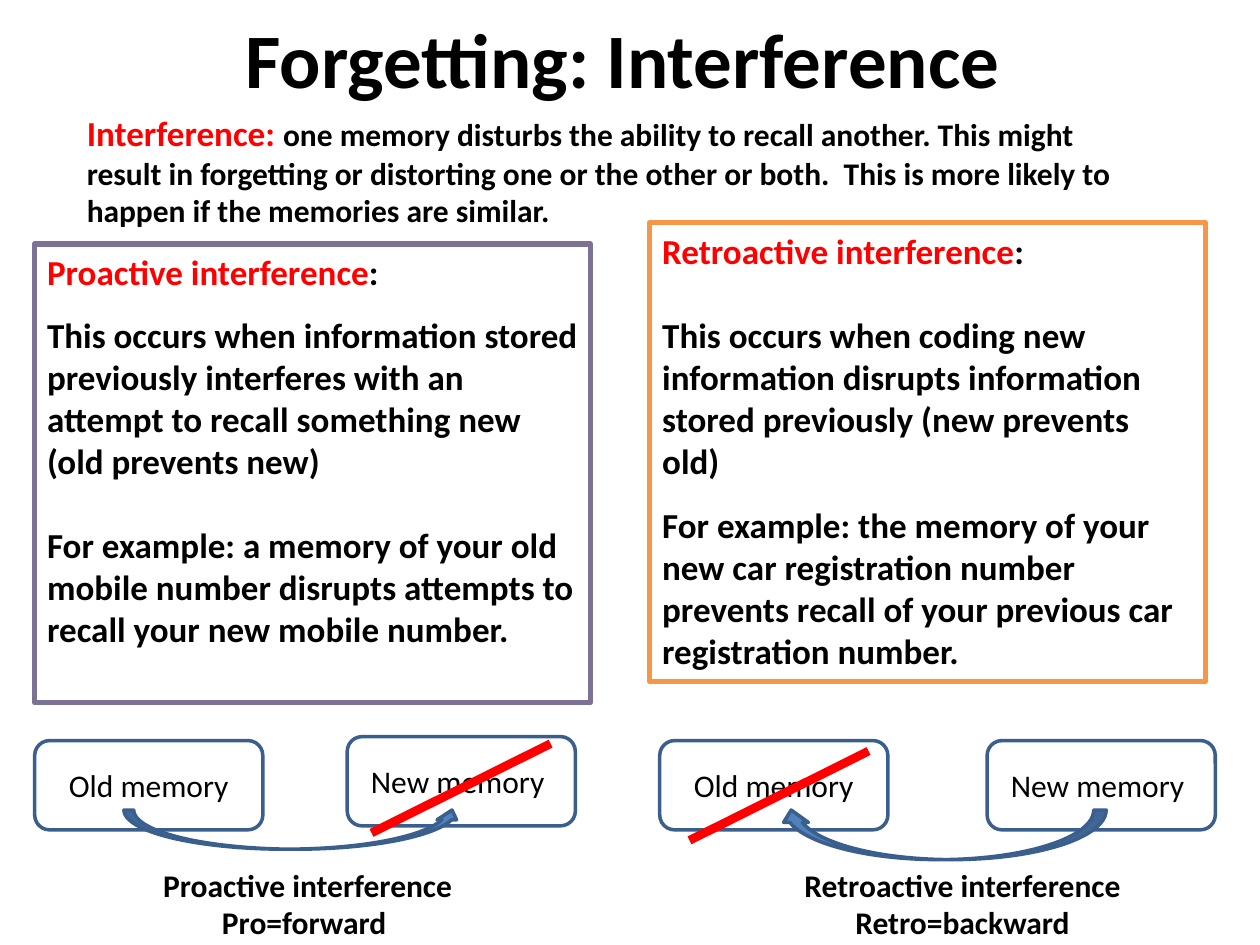
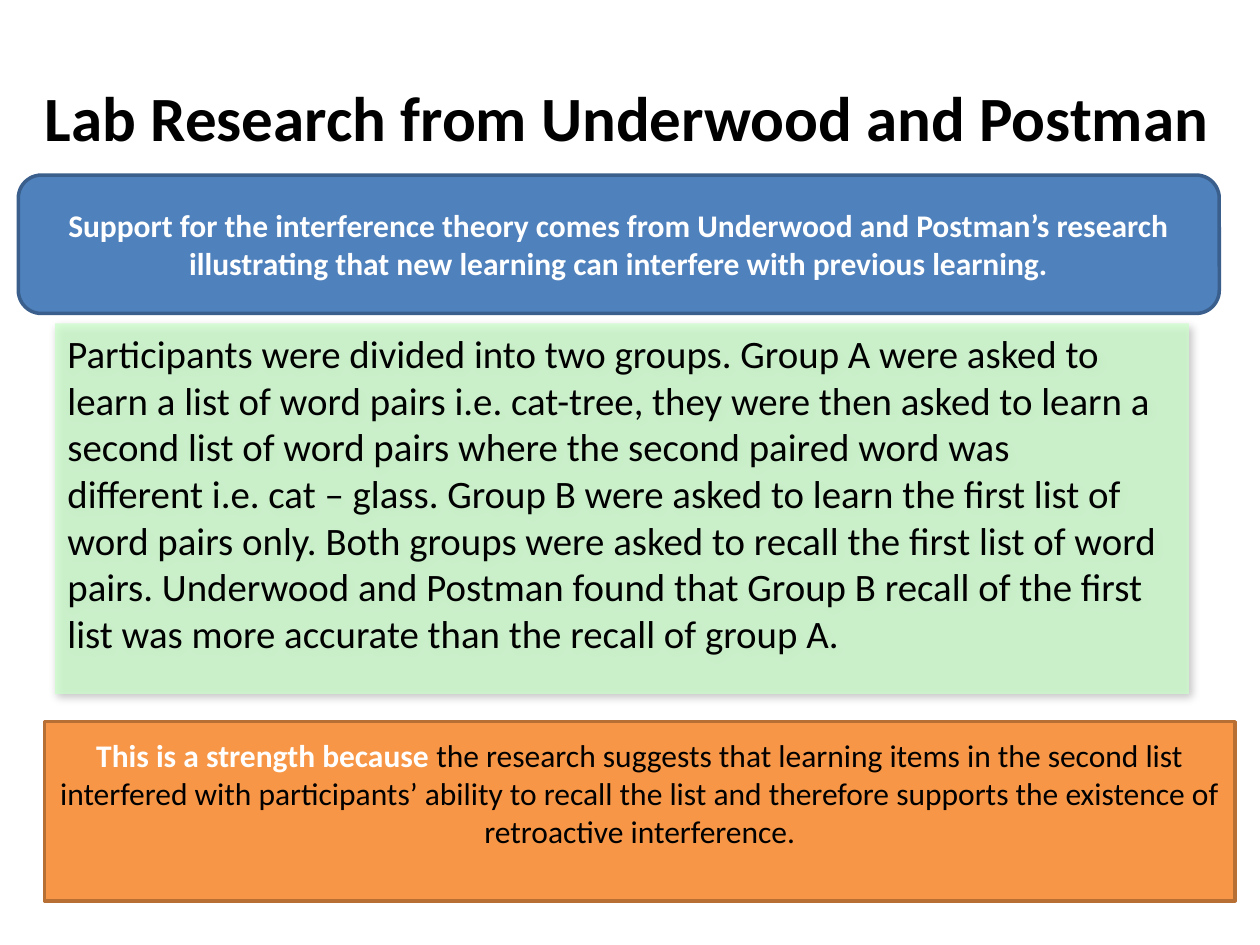
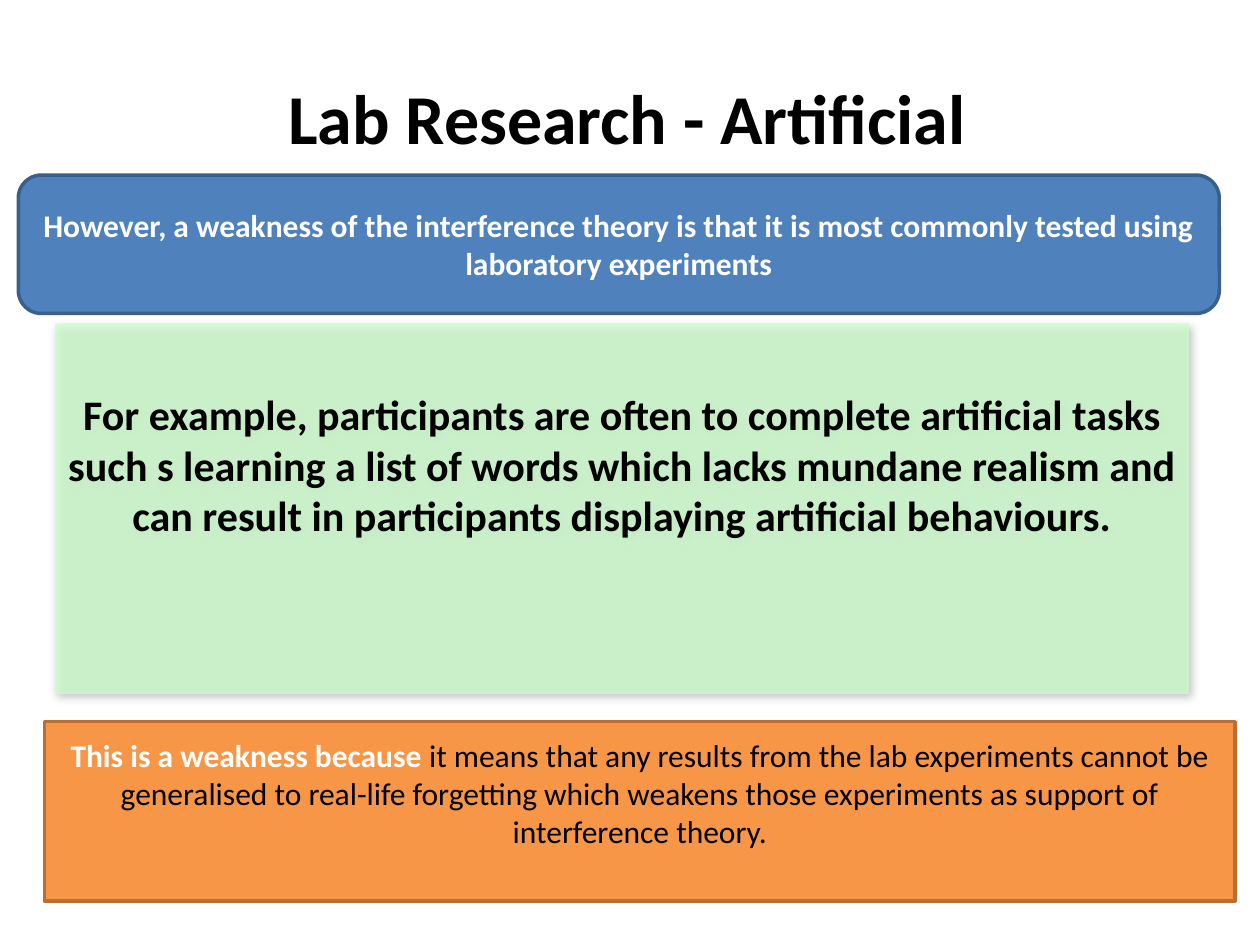
from dataclasses import dataclass
from typing import Optional

from lxml import etree
from pptx import Presentation
from pptx.dml.color import RGBColor
from pptx.enum import shapes, text
from pptx.oxml import ns
from pptx.util import Cm, Pt

SHAPE = shapes.MSO_SHAPE
ANCHOR = text.MSO_ANCHOR
ALIGN = text.PP_ALIGN
NO_BREAK_SPACE = chr(160)


@dataclass(frozen=True)
class Theme:
    font: str = "Calibri"
    ink: str = "000000"
    paper: str = "FFFFFF"
    term: str = "FF0000"
    blue: str = "4F81BD"
    blue_edge: str = "3A5F8C"
    orange: str = "F79646"
    orange_edge: str = "B76F34"
    purple: str = "7D7195"
    green: str = "CCFFCC"
    title: float = 44
    long_title: float = 36
    short_title: float = 40
    definition: float = 20
    label: float = 18
    study: float = 22.2
    example: float = 24
    thin: float = 2
    frame: float = 3
    strike: float = 5


T = Theme()


@dataclass(frozen=True)
class Run:
    text: str
    color: str = T.ink
    size: Optional[float] = None
    bold: Optional[bool] = None


def rgb(color):
    return RGBColor.from_string(color)


def write(sp, paragraphs, size, bold=False, align=ALIGN.LEFT,
          anchor=ANCHOR.TOP, gaps=(), top=0.13, bottom=0.13):
    """Fill a shape with lists of runs; gaps are the points before each paragraph."""
    tf = sp.text_frame
    tf.word_wrap = True
    tf.vertical_anchor = anchor
    tf.margin_top, tf.margin_bottom = Cm(top), Cm(bottom)
    for i, runs in enumerate(paragraphs):
        p = tf.paragraphs[0] if i == 0 else tf.add_paragraph()
        p.alignment = align
        p.font.name, p.font.size, p.font.bold = T.font, Pt(size), bold
        if gaps:
            p.space_before = Pt(gaps[i])
        for run in runs:
            r = p.add_run()
            r.text = run.text
            r.font.color.rgb = rgb(run.color)
            if run.size is not None:
                r.font.size = Pt(run.size)
            if run.bold is not None:
                r.font.bold = run.bold


def add_text(slide, box, paragraphs, size, **style):
    sp = slide.shapes.add_textbox(*map(Cm, box))
    write(sp, paragraphs, size, **style)


def add_title(slide, box, words, size):
    add_text(slide, box, [[Run(words)]], size, bold=True,
             align=ALIGN.CENTER, anchor=ANCHOR.MIDDLE)


def add_block(slide, kind, box, fill, edge=None, width=T.thin):
    sp = slide.shapes.add_shape(kind, *map(Cm, box))
    sp.shadow.inherit = False
    sp.fill.solid()
    sp.fill.fore_color.rgb = rgb(fill)
    if edge:
        sp.line.color.rgb = rgb(edge)
        sp.line.width = Pt(width)
    else:
        sp.line.fill.background()
    return sp


def add_definition(slide, left, top, edge, term, paragraphs, gaps):
    sp = add_block(slide, SHAPE.RECTANGLE, (left, top, 11.2, 9.25),
                   T.paper, edge, T.frame)
    heading = [Run(term, T.term), Run(":")]
    write(sp, [heading] + [[Run(words)] for words in paragraphs],
          T.definition, bold=True, gaps=gaps)


def add_memory(slide, left, top, words):
    sp = add_block(slide, SHAPE.ROUNDED_RECTANGLE, (left, top, 4.6, 1.8),
                   T.paper, T.blue_edge)
    write(sp, [[Run(words)]], T.label, align=ALIGN.CENTER, anchor=ANCHOR.MIDDLE)


def add_strike(slide, left, top):
    """Cross out a memory with a rising line."""
    line = slide.shapes.add_connector(
        shapes.MSO_CONNECTOR.STRAIGHT,
        Cm(left), Cm(top + 1.8), Cm(left + 3.61), Cm(top))
    line.line.color.rgb = rgb(T.term)
    line.line.width = Pt(T.strike)
    etree.SubElement(line._element.spPr, ns.qn("a:effectLst"))


def add_swoop(slide, box, backward=False):
    sp = add_block(slide, SHAPE.CURVED_UP_ARROW, box, T.blue, T.blue_edge)
    if backward:
        sp._element.spPr.find(ns.qn("a:xfrm")).set("flipH", "1")


def add_caption(slide, left, lines):
    add_text(slide, (left, 17.32, 8.61, 1.8), [[Run(line)] for line in lines],
             T.label, bold=True, align=ALIGN.CENTER)


def soften(sp):
    """Make the fill translucent and cast a soft shadow to the lower right."""
    spPr = sp._element.spPr
    color = spPr.find(ns.qn("a:solidFill"))[0]
    etree.SubElement(color, ns.qn("a:alpha"), val="74000")
    shadow = etree.SubElement(
        spPr.find(ns.qn("a:effectLst")), ns.qn("a:outerShdw"),
        blurRad=str(Pt(4.5)), dist=str(Pt(2.6)), dir=str(53 * 60000),
        algn="ctr", rotWithShape="0")
    black = etree.SubElement(shadow, ns.qn("a:srgbClr"), val=T.ink)
    etree.SubElement(black, ns.qn("a:alpha"), val="30000")


def add_interference_slide(slide):
    add_title(slide, (1.3, 0, 22.86, 2.34), "Forgetting: Interference ", T.title)
    add_definition(
        slide, 0.7, 4.92, T.purple, "Proactive interference",
        ["This occurs when information stored previously interferes with an "
         "attempt to recall something new (old prevents new)",
         "For example: a memory of your old mobile number disrupts attempts to "
         "recall your new mobile number."],
        gaps=(0, 12, 24))
    add_definition(
        slide, 13.1, 4.49, T.orange, "Retroactive interference",
        ["This occurs when coding new information disrupts information stored "
         "previously (new prevents old)",
         "For example: the memory of your new car registration number prevents "
         "recall of your previous car registration number."],
        gaps=(0, 24, 12.5))
    add_text(
        slide, (1.5, 2.12, 21.79, 2.64),
        [[Run("Interference: ", T.term, size=T.definition),
          Run("one memory disturbs the ability to recall another. This might "
              "result in forgetting or distorting one or the other or both.  "
              "This is more likely to happen if the memories are similar.")]],
        T.label, bold=True)

    add_memory(slide, 7, 14.85, "New memory ")
    add_memory(slide, 0.7, 14.93, "Old memory")
    add_strike(slide, 7.49, 14.99)
    add_swoop(slide, (2.5, 16.33, 6.81, 0.79))
    add_caption(slide, 1.9, ["Proactive interference", "Pro=forward "])

    add_memory(slide, 19.9, 14.93, "New memory ")
    add_memory(slide, 13.3, 14.93, "Old memory")
    add_strike(slide, 13.9, 15.14)
    add_swoop(slide, (15.7, 16.33, 6.6, 1), backward=True)
    add_caption(slide, 15.1, ["Retroactive interference", "Retro=backward"])


def add_research_slide(slide, title, title_size, claim, evidence,
                       evidence_style, verdict, reason):
    add_title(slide, (0.37, 0.76, 24.54, 3.18), title, title_size)

    sp = add_block(slide, SHAPE.RECTANGLE, (1.11, 6.52, 22.86, 7.47), T.green)
    soften(sp)
    write(sp, [[Run(evidence)]], **evidence_style)

    sp = add_block(slide, SHAPE.ROUNDED_RECTANGLE, (0.37, 3.53, 24.21, 2.79),
                   T.blue, T.blue_edge)
    write(sp, [[Run(claim, T.paper)]], T.label, bold=True,
          align=ALIGN.CENTER, anchor=ANCHOR.MIDDLE)

    sp = add_block(slide, SHAPE.RECTANGLE, (0.9, 14.55, 24, 3.61),
                   T.orange, T.orange_edge)
    write(sp, [[Run(verdict, T.paper, bold=True), Run(reason)]], T.label,
          align=ALIGN.CENTER, anchor=ANCHOR.MIDDLE, bottom=0.87)


def main():
    prs = Presentation()
    prs.slide_width, prs.slide_height = Cm(25.4), Cm(19.05)
    interference, support, weakness = (
        prs.slides.add_slide(prs.slide_layouts[6]) for _ in range(3))

    add_interference_slide(interference)
    add_research_slide(
        support, "Lab Research from Underwood and Postman", T.long_title,
        claim="Support for the interference theory comes from Underwood and "
              "Postman’s research illustrating that new learning can interfere "
              "with previous learning.",
        evidence="Participants were divided into two groups. Group A were asked "
                 "to learn a list of word pairs i.e. cat-tree, they were then "
                 "asked to learn a second list of word pairs where the second "
                 f"paired word was different{NO_BREAK_SPACE}i.e. cat – glass. "
                 "Group B were asked to learn the first list of word pairs only. "
                 "Both groups were asked to recall the first list of word pairs. "
                 "Underwood and Postman found that Group B recall of the first "
                 "list was more accurate than the recall of group A.",
        evidence_style=dict(size=T.study),
        verdict="This is a strength because",
        reason=" the research suggests that learning items in the second list "
               "interfered with participants’ ability to recall the list and "
               "therefore supports the existence of retroactive interference.")
    add_research_slide(
        weakness, "Lab Research - Artificial", T.short_title,
        claim="However, a weakness of the interference theory is that it is most "
              "commonly tested using laboratory experiments",
        evidence="For example, participants are often to complete artificial "
                 "tasks such s learning a list of words which lacks mundane "
                 "realism and can result in participants displaying artificial "
                 "behaviours.",
        evidence_style=dict(size=T.example, bold=True, align=ALIGN.CENTER,
                            top=1.32),
        verdict="This is a weakness because",
        reason=" it means that any results from the lab experiments cannot be "
               "generalised to real-life forgetting which weakens those "
               "experiments as support of interference theory.")
    prs.save("out.pptx")


if __name__ == "__main__":
    main()
